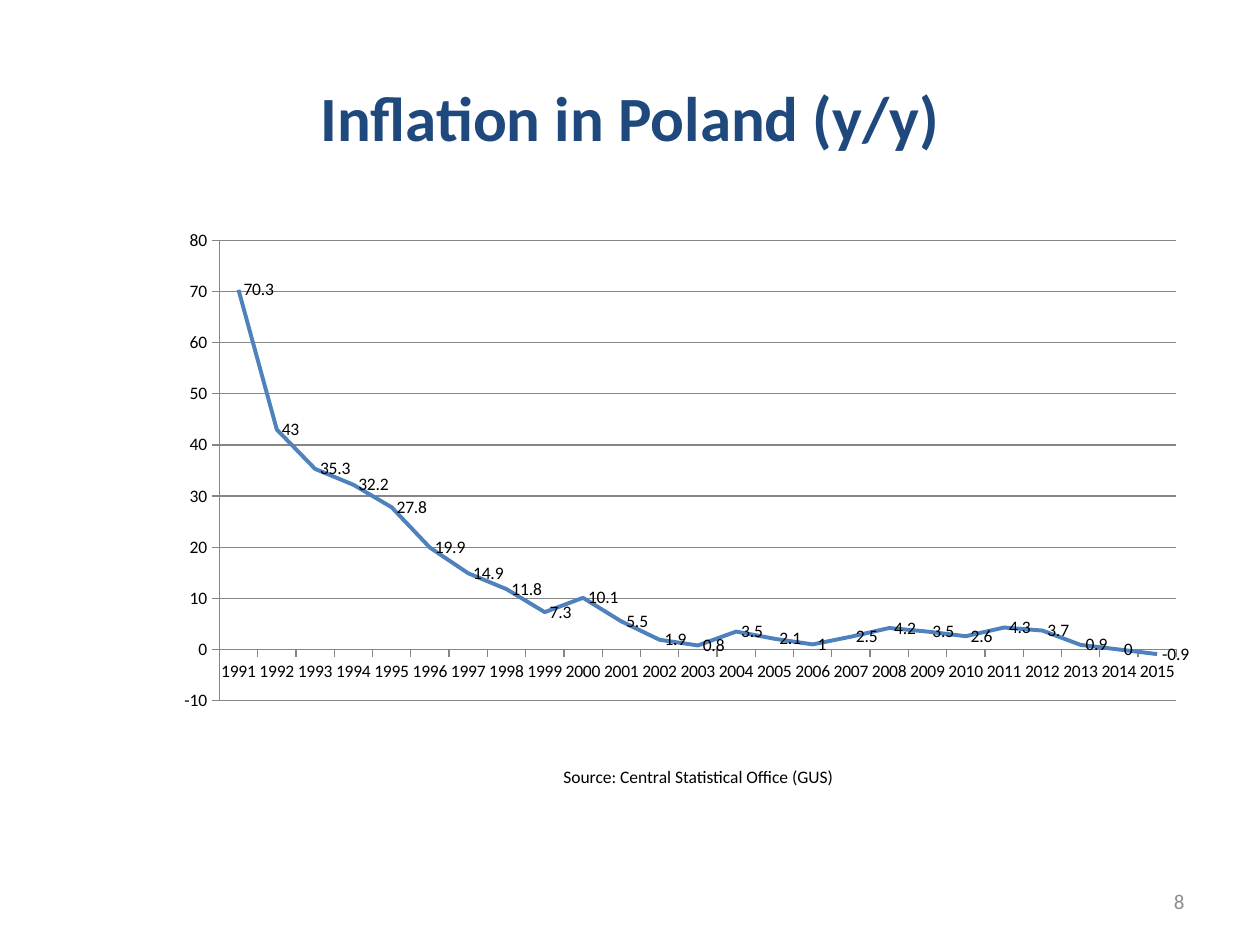
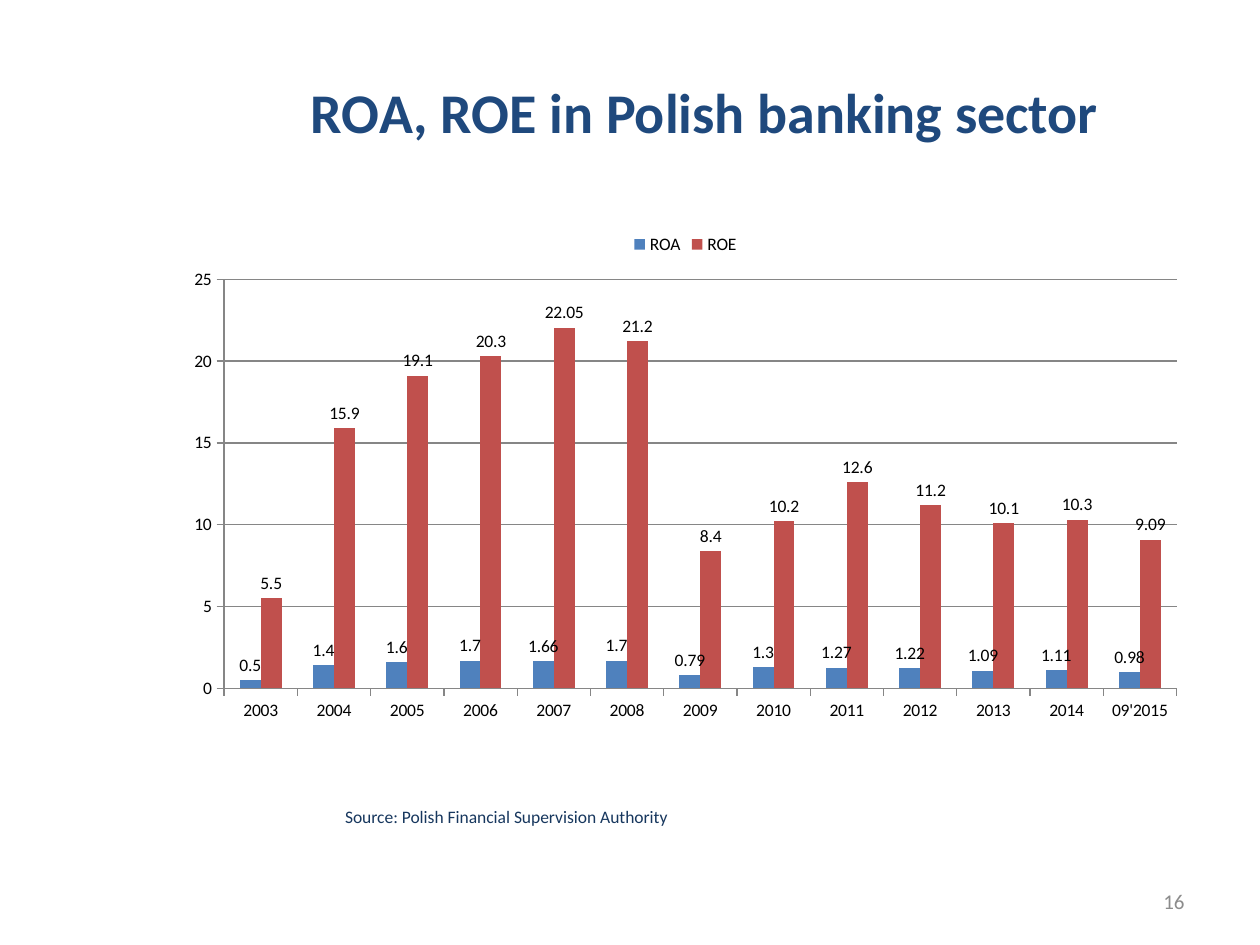
from pptx import Presentation
from pptx.chart.data import CategoryChartData
from pptx.dml.color import RGBColor
from pptx.enum.chart import XL_CHART_TYPE, XL_LABEL_POSITION, XL_LEGEND_POSITION, XL_TICK_MARK
from pptx.enum.text import MSO_ANCHOR, PP_ALIGN
from pptx.util import Inches, Pt

NAVY = RGBColor(0x1F, 0x49, 0x7D)
DEEP_NAVY = RGBColor(0x17, 0x37, 0x5E)
BLUE = RGBColor(0x4F, 0x81, 0xBD)
RED = RGBColor(0xC0, 0x50, 0x4D)
GRAY = RGBColor(0x8C, 0x8C, 0x8C)
GRID = RGBColor(0x86, 0x86, 0x86)
BLACK = RGBColor(0, 0, 0)
FONT = "Calibri"

prs = Presentation()
prs.slide_width, prs.slide_height = Inches(10), Inches(7.5)


def share(x, y, w, h):
    W, H = prs.slide_width, prs.slide_height
    return [int(v * side / 100) for v, side in ((x, W), (y, H), (w, W), (h, H))]


def add_text(slide, text, at, size, color, align=PP_ALIGN.CENTER, bold=False,
             anchor=MSO_ANCHOR.MIDDLE, wrap=True):
    tf = slide.shapes.add_textbox(*share(*at)).text_frame
    tf.word_wrap, tf.vertical_anchor = wrap, anchor
    p = tf.paragraphs[0]
    p.alignment = align
    r = p.add_run()
    r.text = text
    for key, value in dict(name=FONT, size=Pt(size), bold=bold).items():
        setattr(r.font, key, value)
    r.font.color.rgb = color


slides = [
    dict(
        title="Inflation in Poland (y/y)", title_at=(5, 4, 90, 16.67), title_size=36,
        number="8",
        source="Source: Central Statistical Office (GUS)", source_at=(43.5, 80.4, 23.8, 3.6),
        source_color=BLACK, source_align=PP_ALIGN.CENTER,
        kind=XL_CHART_TYPE.LINE, chart_at=(13, 23.33, 82, 52.93),
        label_position=XL_LABEL_POSITION.RIGHT,
        scale=dict(minimum_scale=-10, maximum_scale=80, major_unit=10),
        categories=[str(year) for year in range(1991, 2016)],
        series=[("Series 1", BLUE, [
            70.3, 43, 35.3, 32.2, 27.8, 19.9, 14.9, 11.8, 7.3, 10.1, 5.5, 1.9, 0.8,
            3.5, 2.1, 1, 2.5, 4.2, 3.5, 2.6, 4.3, 3.7, 0.9, 0, -0.9])],
    ),
    dict(
        title="ROA, ROE in Polish banking sector", title_at=(16.9, 4, 78.1, 15.6), title_size=32,
        number="16",
        source="Source: Polish Financial Supervision Authority", source_at=(26.4, 84.67, 27.9, 3.6),
        source_color=DEEP_NAVY, source_align=PP_ALIGN.LEFT,
        kind=XL_CHART_TYPE.COLUMN_CLUSTERED, chart_at=(13.8, 23.33, 81.2, 54),
        label_position=XL_LABEL_POSITION.OUTSIDE_END,
        scale=dict(minimum_scale=0, maximum_scale=25, major_unit=5),
        categories=[str(year) for year in range(2003, 2015)] + ["09'2015"],
        series=[
            ("ROA", BLUE, [0.5, 1.4, 1.6, 1.7, 1.66, 1.7, 0.79, 1.3, 1.27, 1.22, 1.09, 1.11, 0.98]),
            ("ROE", RED, [5.5, 15.9, 19.1, 20.3, 22.05, 21.2, 8.4, 10.2, 12.6, 11.2, 10.1, 10.3, 9.09]),
        ],
    ),
]

for s in slides:
    slide = prs.slides.add_slide(prs.slide_layouts[6])
    add_text(slide, s["title"], s["title_at"], s["title_size"], NAVY, bold=True)
    add_text(slide, s["number"], (71.7, 92.67, 23.3, 5.33), 12, GRAY, PP_ALIGN.RIGHT)

    data = CategoryChartData()
    data.categories = s["categories"]
    for name, color, values in s["series"]:
        data.add_series(name, values)
    chart = slide.shapes.add_chart(s["kind"], *share(*s["chart_at"]), data).chart
    chart.has_title = False
    chart.font.name, chart.font.size = FONT, Pt(10)
    chart.font.color.rgb = BLACK

    chart.has_legend = len(s["series"]) > 1
    if chart.has_legend:
        chart.legend.position = XL_LEGEND_POSITION.TOP
        chart.legend.include_in_layout = False

    for key, value in s["scale"].items():
        setattr(chart.value_axis, key, value)
    chart.value_axis.has_major_gridlines = True
    for axis in (chart.category_axis, chart.value_axis):
        axis.major_tick_mark = XL_TICK_MARK.OUTSIDE
        axis.minor_tick_mark = XL_TICK_MARK.NONE
    for part in (chart.category_axis, chart.value_axis, chart.value_axis.major_gridlines):
        part.format.line.color.rgb = GRID
        part.format.line.width = Pt(0.75)

    plot = chart.plots[0]
    plot.vary_by_categories = False
    plot.has_data_labels = True
    for key, value in dict(show_value=True, position=s["label_position"]).items():
        setattr(plot.data_labels, key, value)

    for series, (name, color, values) in zip(plot.series, s["series"]):
        if s["kind"] == XL_CHART_TYPE.LINE:
            series.smooth = False
            series.format.line.color.rgb = color
            series.format.line.width = Pt(2.25)
        else:
            plot.gap_width = 150
            series.invert_if_negative = False
            series.format.fill.solid()
            series.format.fill.fore_color.rgb = color

    add_text(slide, s["source"], s["source_at"], 10, s["source_color"], s["source_align"],
             anchor=MSO_ANCHOR.TOP, wrap=False)

prs.save("out.pptx")
